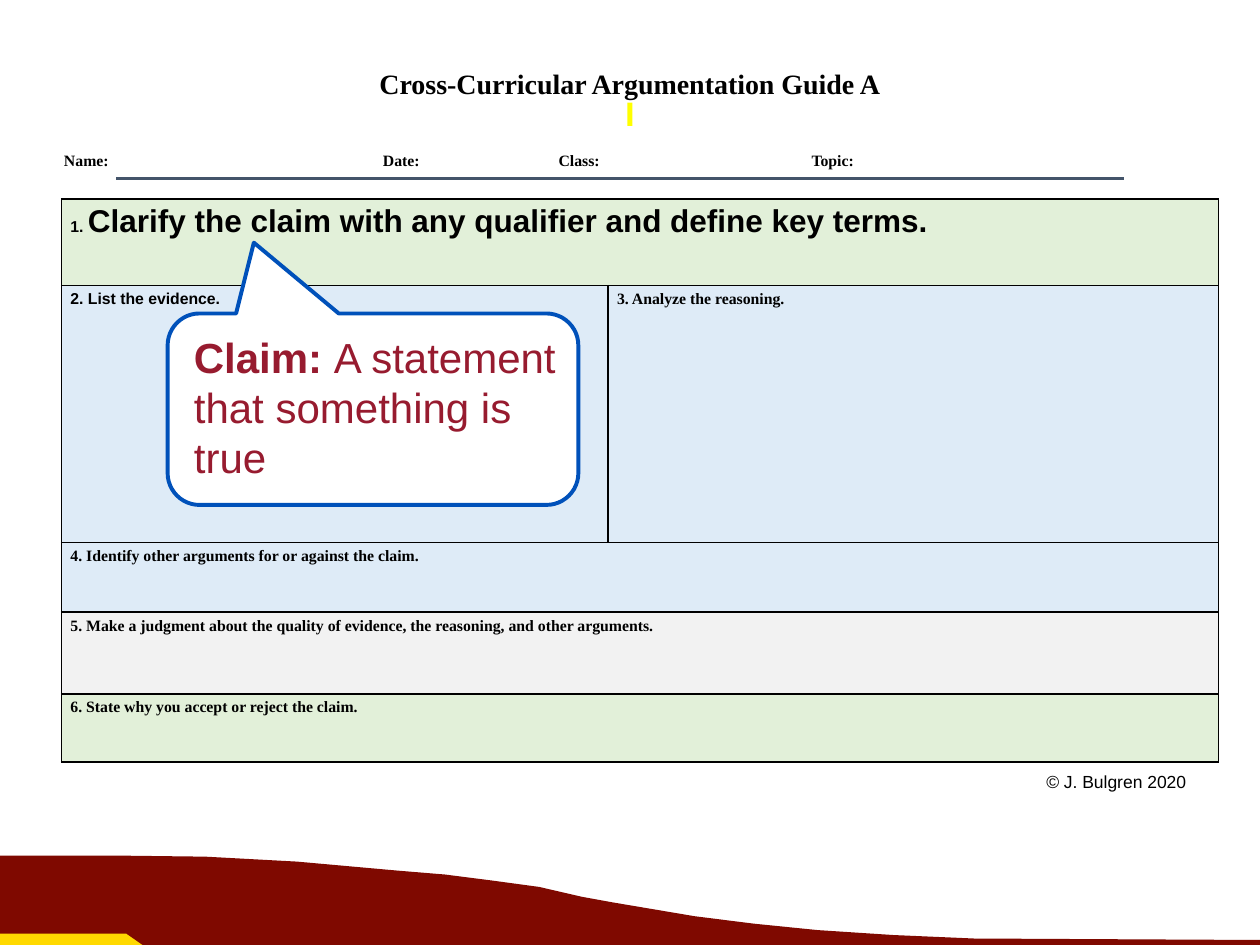
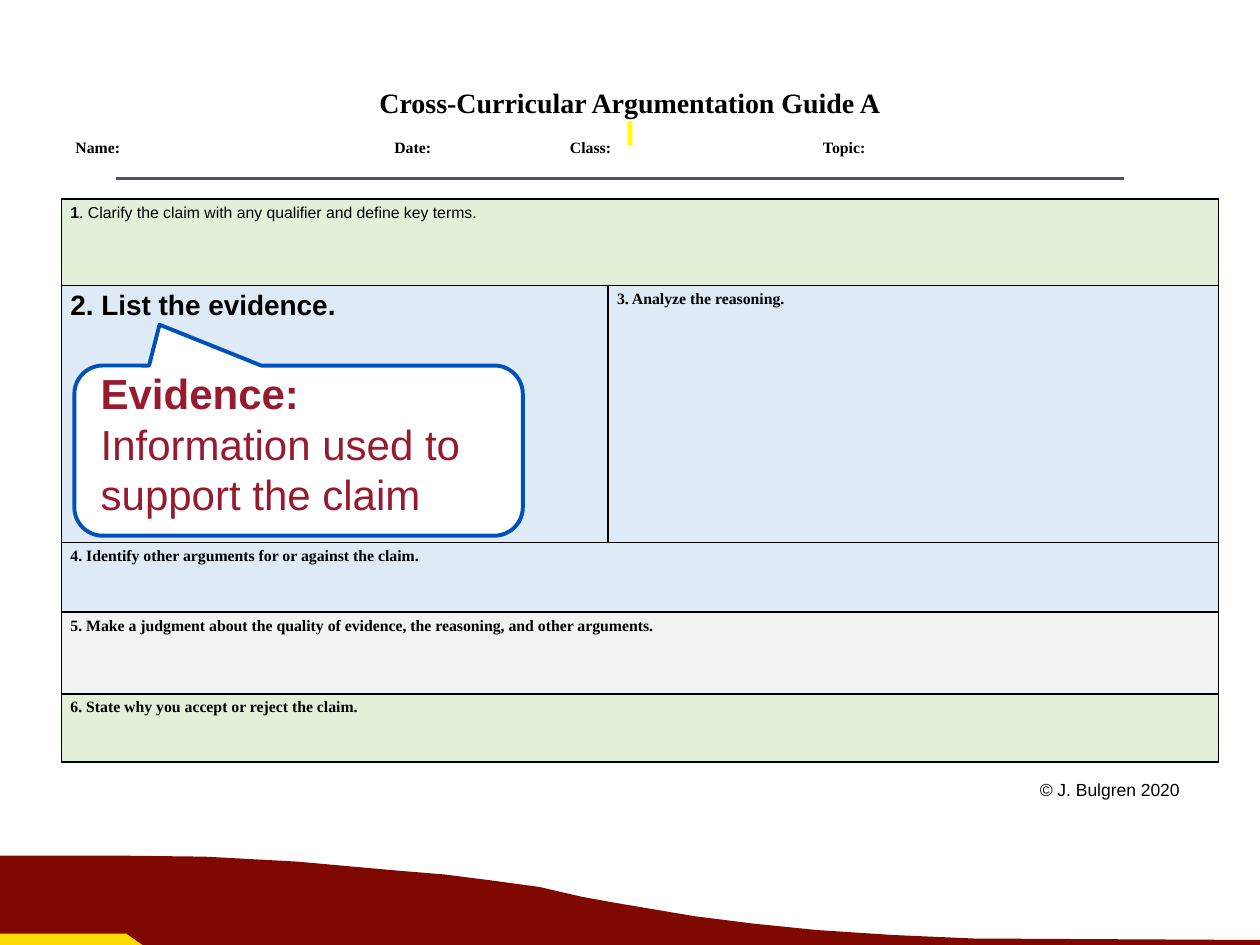
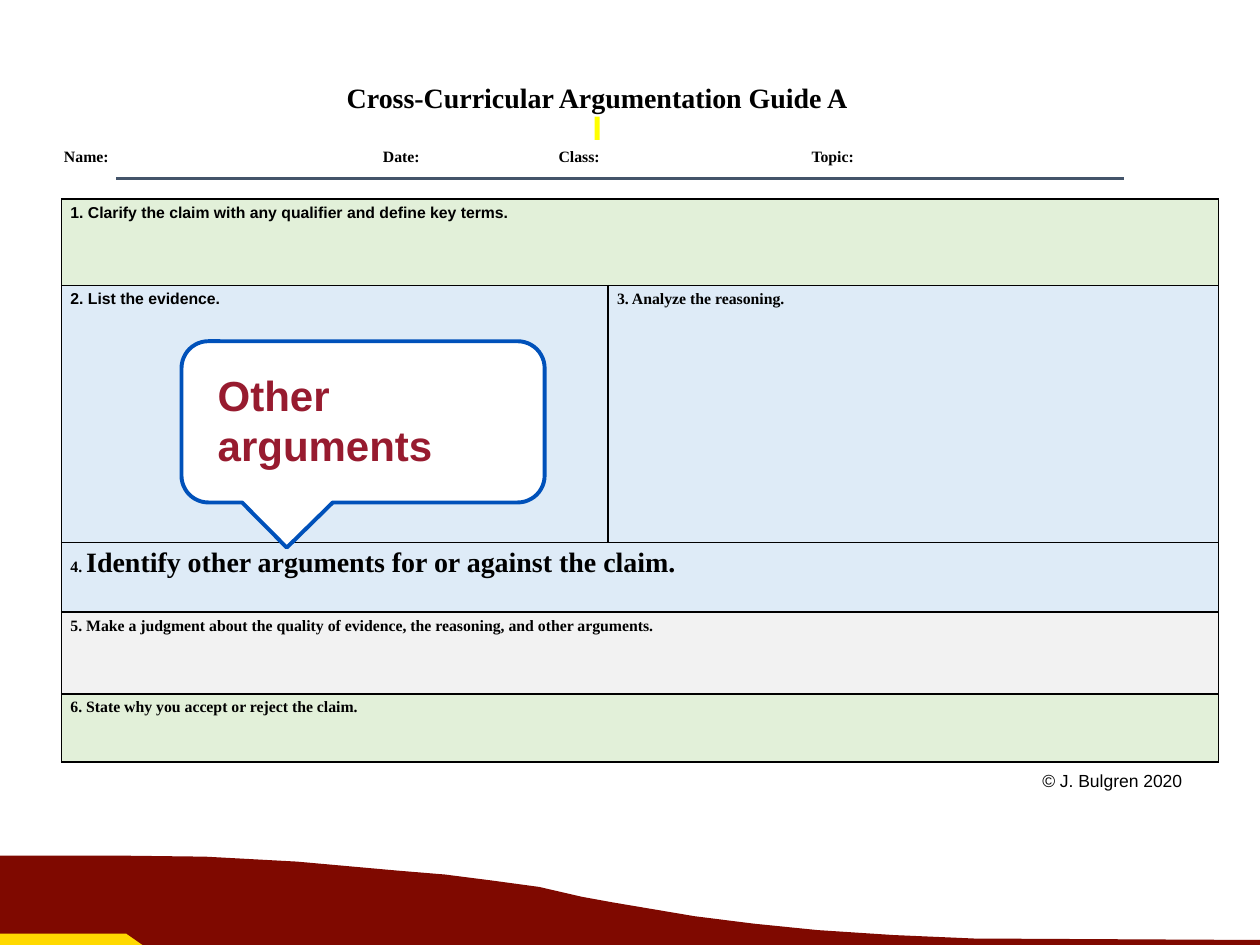
from lxml import etree
from pptx import Presentation
from pptx.dml.color import RGBColor
from pptx.enum.shapes import MSO_CONNECTOR, MSO_SHAPE
from pptx.enum.text import PP_ALIGN
from pptx.oxml.ns import qn
from pptx.util import Cm, Pt

STRAIGHT = MSO_CONNECTOR.STRAIGHT
RECTANGLE = MSO_SHAPE.RECTANGLE
CALLOUT = MSO_SHAPE.ROUNDED_RECTANGULAR_CALLOUT
LEFT, CENTER, RIGHT = PP_ALIGN.LEFT, PP_ALIGN.CENTER, PP_ALIGN.RIGHT

# Shared colours and fonts
rgb = RGBColor.from_string
BLACK, WHITE, YELLOW = "000000", "FFFFFF", "FFFF00"
MAROON, GOLD, SLATE = "7F0900", "FFD900", "44546A"
BLUE, CRIMSON = "0051BA", "971B2F"
GREEN, PALE_BLUE, GREY = "E2F0D9", "DEEBF7", "F2F2F2"
SANS, SERIF = "Arial", "Times New Roman"

# Shared footer bands, as outlines in centimetres
BANDS = [
    (MAROON, [(25.4, 19.05), (0, 19.05), (0, 17.25), (2.49, 17.25), (4.14, 17.27),
              (5.99, 17.37), (8, 17.55), (8.97, 17.63), (9.91, 17.75), (10.87, 17.88),
              (11.73, 18.08), (12.34, 18.19), (14, 18.47), (15.19, 18.62),
              (16.48, 18.75), (18.01, 18.85), (19.63, 18.92), (25.4, 18.95)]),
    (GOLD, [(0, 18.82), (2.54, 18.82), (2.87, 19.05), (0, 19.05)]),
]

# Name line: label, column width, left margin
FIELDS = [("Name:", 6.43, 0.2), ("Date:", 3, 0.2), ("Class:", 3.84, 0.74),
          ("Topic:", 10.36, 2)]

# Guide table: row, column, fill, font, question
GUIDE_COLUMNS = [11.02, 12.3]
GUIDE_ROWS = [1.75, 5.18, 1.4, 1.65, 1.37]
QUESTIONS = [
    (0, 0, GREEN, SANS, "1. Clarify the claim with any qualifier and define key terms."),
    (1, 0, PALE_BLUE, SANS, "2. List the evidence."),
    (1, 1, PALE_BLUE, SERIF, "3. Analyze the reasoning."),
    (2, 0, PALE_BLUE, SERIF, "4. Identify other arguments for or against the claim."),
    (3, 0, GREY, SERIF, "5. Make a judgment about the quality of evidence, "
                        "the reasoning, and other arguments."),
    (4, 0, GREEN, SERIF, "6. State why you accept or reject the claim."),
]

# What differs by slide; runs are (text, size, bold), boxes are left, top, width, height
SLIDES = [
    {"title": (3.66, 1.22), "fields": (1.09, 2.97), "copyright": (20.65, 15.42),
     "emphasis": {0: [("1. ", 9, True),
                      ("Clarify the claim with any qualifier and define key terms.", 18, True)]},
     "callout": (3.38, 6.32, 8.28, 3.86), "tip": (-0.29, -0.87),
     "note": (3.66, 6.55, 8, 3.33),
     "definition": [("Claim: ", 24, True), ("A statement that something is true", 24, False)]},
    {"title": (3.66, 1.6), "fields": (1.32, 2.72), "copyright": (20.52, 15.57),
     "emphasis": {0: [("1", 9, True),
                      (". Clarify the claim with any qualifier and define key terms.", 9, False)],
                  1: [("2. List the evidence.", 16, True)]},
     "callout": (1.5, 7.37, 9.04, 3.43), "tip": (-0.31, -0.74),
     "note": (1.78, 7.29, 8.48, 3.33),
     "definition": [("Evidence: ", 24, True),
                    ("Information used to support the claim", 24, False)]},
    {"title": (3, 1.5), "fields": (1.09, 2.9), "copyright": (20.57, 15.39),
     "emphasis": {3: [("4. ", 9, True),
                      ("Identify other arguments for or against the claim.", 16, True)]},
     "callout": (3.66, 6.88, 7.32, 3.25), "tip": (-0.21, 0.78),
     "note": (4.14, 7.32, 6.45, 2.31),
     "definition": [("Other arguments", 24, True)]},
]


def write(text_frame, runs, font, color=BLACK, align=LEFT):
    """Fill the first paragraph with styled runs."""
    text_frame.word_wrap = True
    para = text_frame.paragraphs[0]
    para.alignment = align
    for text, size, bold in runs:
        span = para.add_run()
        span.text = text
        span.font.name = font
        span.font.size = Pt(size)
        span.font.bold = bold
        span.font.color.rgb = rgb(color)


def style_cell(cell, fill=None):
    """Give a cell a fill with black borders, or neither."""
    properties = cell._tc.get_or_add_tcPr()
    for side in ("lnL", "lnR", "lnT", "lnB"):
        border = etree.SubElement(properties, qn(f"a:{side}"), w=str(Pt(1)))
        if fill:
            paint = etree.SubElement(border, qn("a:solidFill"))
            etree.SubElement(paint, qn("a:srgbClr"), val=BLACK)
        else:
            etree.SubElement(border, qn("a:noFill"))
    if fill:
        cell.fill.solid()
        cell.fill.fore_color.rgb = rgb(fill)
    else:
        cell.fill.background()
    cell.margin_left = cell.margin_right = Cm(0.18)
    cell.margin_top = cell.margin_bottom = Cm(0.1)


deck = Presentation()
deck.slide_width, deck.slide_height = Cm(25.4), Cm(19.05)

for content in SLIDES:
    page = deck.slides.add_slide(deck.slide_layouts[6])
    shapes = page.shapes

    # Footer bands
    for color, outline in BANDS:
        points = [(Cm(x), Cm(y)) for x, y in outline]
        builder = shapes.build_freeform(*points[0])
        builder.add_line_segments(points[1:], close=True)
        band = builder.convert_to_shape()
        band.shadow.inherit = False
        band.fill.solid()
        band.fill.fore_color.rgb = rgb(color)
        band.line.fill.background()

    # Rule under the name line
    rule = shapes.add_connector(STRAIGHT, Cm(2.34), Cm(3.6), Cm(22.66), Cm(3.6))
    rule.line.color.rgb = rgb(SLATE)
    rule.line.width = Pt(1.5)
    etree.SubElement(rule._element.spPr, qn("a:effectLst"))

    # Title with its yellow mark
    left, top = content["title"]
    title = shapes.add_textbox(Cm(left), Cm(top), Cm(18.08), Cm(1.96))
    write(title.text_frame, [("Cross-Curricular Argumentation Guide A", 16, True)],
          SERIF, align=CENTER)
    mark = shapes.add_shape(RECTANGLE, Cm(left + 8.99), Cm(top + 0.85), Cm(0.1), Cm(0.47))
    mark.shadow.inherit = False
    mark.fill.solid()
    mark.fill.fore_color.rgb = rgb(YELLOW)
    mark.line.fill.background()

    # Name line
    left, top = content["fields"]
    fields = shapes.add_table(1, len(FIELDS), Cm(left), Cm(top), Cm(23.63), Cm(0.56)).table
    fields.first_row = fields.horz_banding = False
    fields.rows[0].height = Cm(0.56)
    for column, (label, width, margin) in enumerate(FIELDS):
        fields.columns[column].width = Cm(width)
        cell = fields.cell(0, column)
        style_cell(cell)
        cell.margin_left = Cm(margin)
        write(cell.text_frame, [(label, 9, True)], SERIF)

    # Guide table
    guide = shapes.add_table(len(GUIDE_ROWS), len(GUIDE_COLUMNS), Cm(1.24), Cm(4.01),
                             Cm(sum(GUIDE_COLUMNS)), Cm(sum(GUIDE_ROWS))).table
    guide.first_row = guide.horz_banding = False
    for column, width in enumerate(GUIDE_COLUMNS):
        guide.columns[column].width = Cm(width)
    for row, height in enumerate(GUIDE_ROWS):
        guide.rows[row].height = Cm(height)
    for number, (row, column, fill, font, question) in enumerate(QUESTIONS):
        cell = guide.cell(row, column)
        style_cell(cell, fill)
        if row != 1:
            style_cell(guide.cell(row, 1), fill)
            cell.merge(guide.cell(row, 1))
        runs = content["emphasis"].get(number, [(question, 9, True)])
        write(cell.text_frame, runs, font)

    # Copyright line
    left, top = content["copyright"]
    box = shapes.add_textbox(Cm(left), Cm(top), Cm(3.51), Cm(0.76))
    write(box.text_frame, [("© J. Bulgren 2020", 10, False)], SANS, align=RIGHT)

    # Callout and its definition
    callout = shapes.add_shape(CALLOUT, *map(Cm, content["callout"]))
    callout.adjustments[0], callout.adjustments[1] = content["tip"]
    callout.shadow.inherit = False
    callout.fill.solid()
    callout.fill.fore_color.rgb = rgb(WHITE)
    callout.line.color.rgb = rgb(BLUE)
    callout.line.width = Pt(2.25)
    note = shapes.add_textbox(*map(Cm, content["note"]))
    write(note.text_frame, content["definition"], SANS, CRIMSON)

deck.save("out.pptx")
